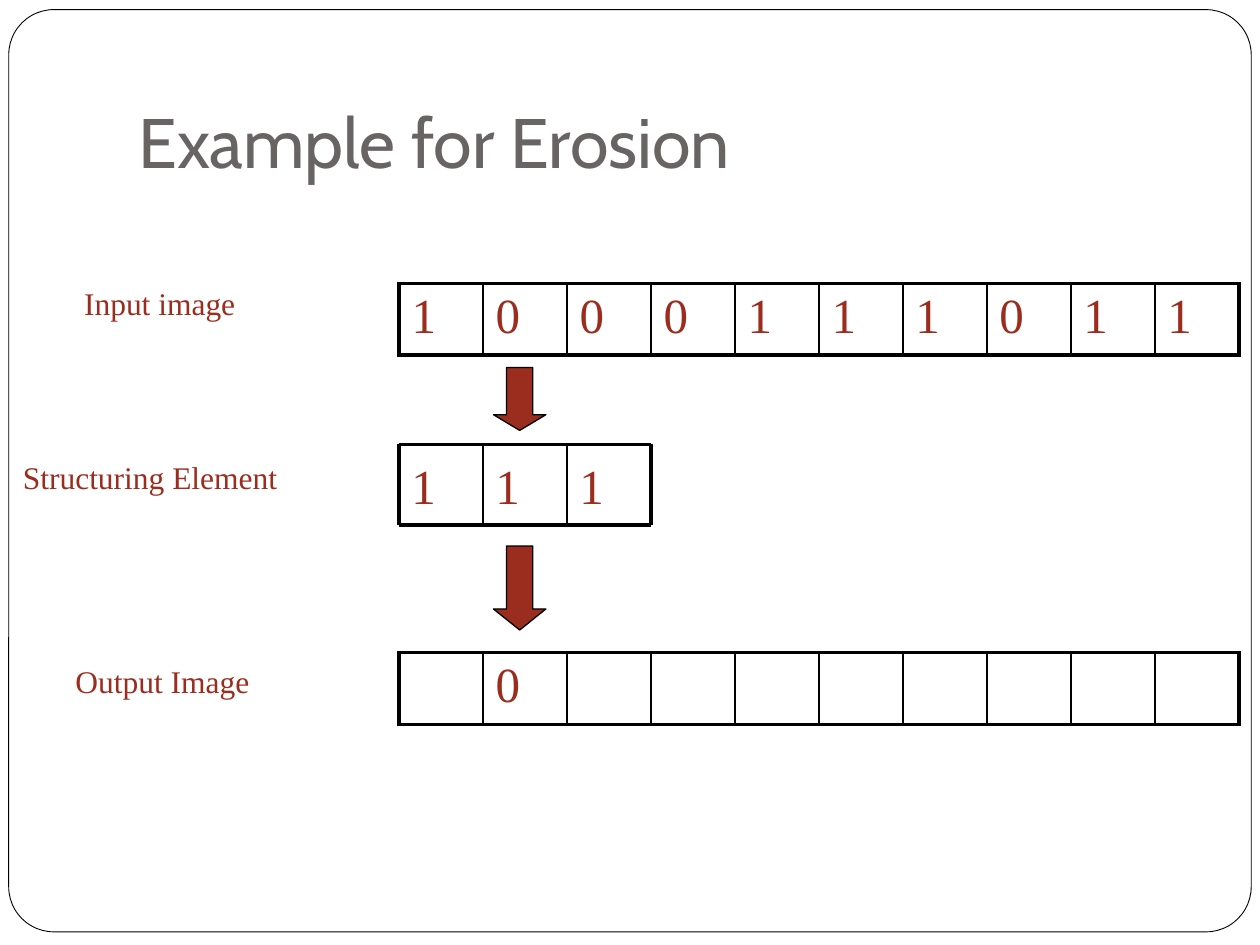
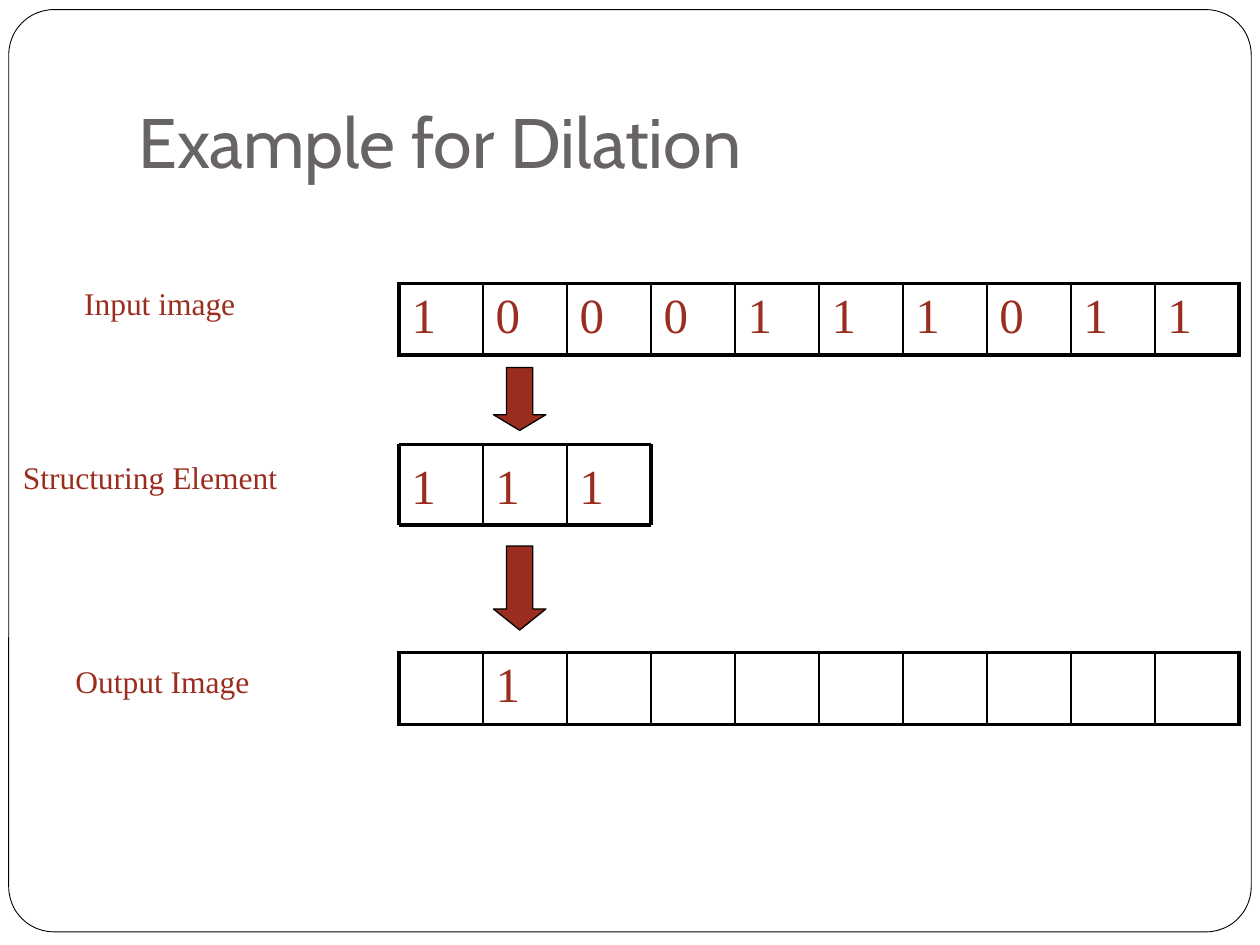
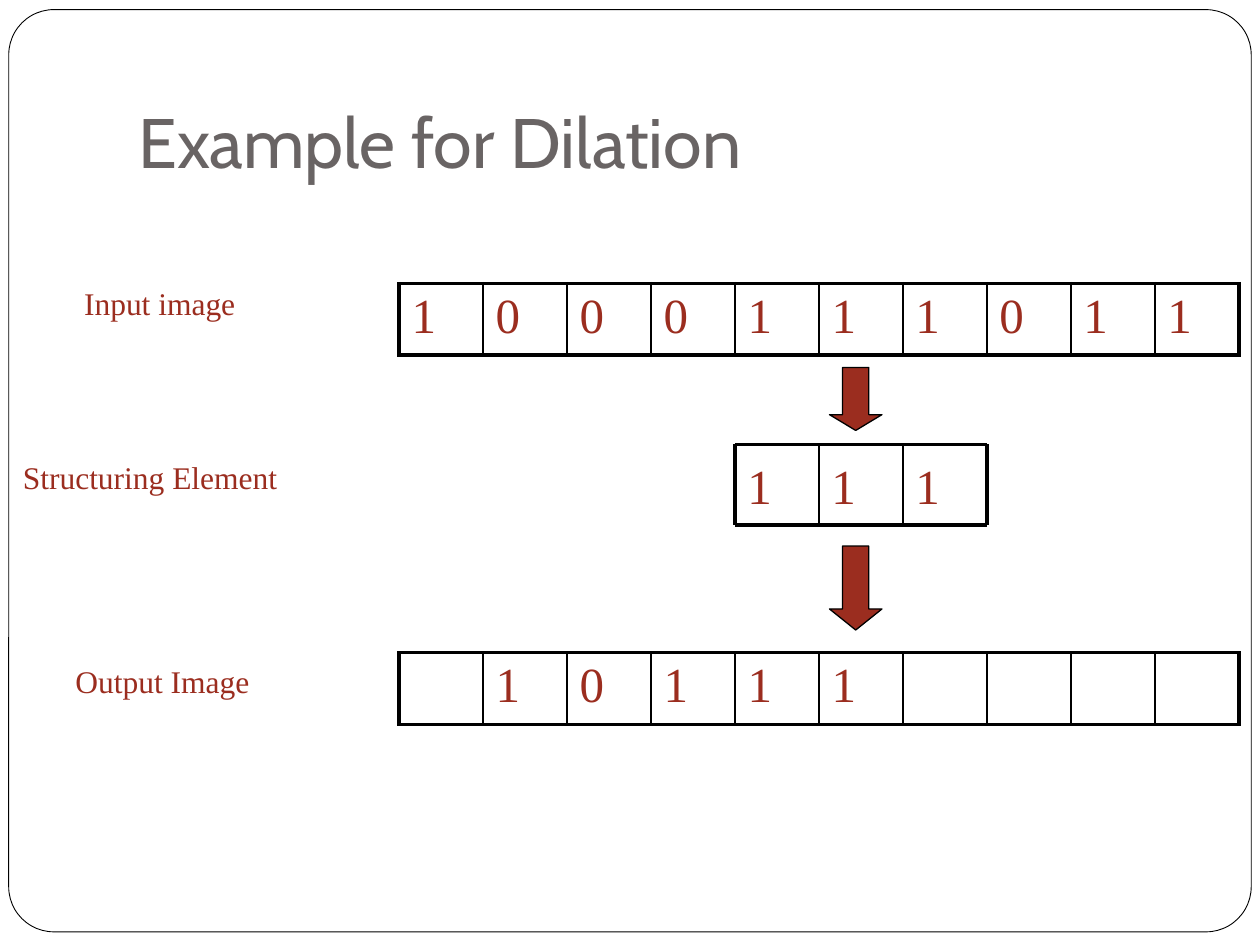
from dataclasses import dataclass

from lxml.etree import SubElement
from pptx import Presentation
from pptx.dml.color import RGBColor as RGB
from pptx.enum.shapes import MSO_CONNECTOR as Link, MSO_SHAPE as Form
from pptx.enum.text import MSO_ANCHOR as Anchor, MSO_AUTO_SIZE as Fit
from pptx.oxml.ns import qn
from pptx.util import Pt


@dataclass(frozen=True)
class Theme:
    red: RGB = RGB(0x9B, 0x2D, 0x1F)
    gray: RGB = RGB(0x69, 0x64, 0x64)
    black: RGB = RGB(0, 0, 0)
    white: RGB = RGB(255, 255, 255)
    head: str = "Cabin"
    body: str = "Times New Roman"
    title: int = 40
    label: int = 18
    digit: int = 28
    thick: float = 2.25
    thin: float = 1


LEFT, CELL, COUNT = 228, 48, 10
ROW = 40.5
INPUT_TOP, KERNEL_TOP, OUTPUT_TOP = 162, 254, 373
KERNEL_TALL = 46
INPUT, KERNEL = "1000111011", "111"
LABELS = (
    ("Input image", 41, 159, 130),
    ("Structuring Element", 6, 258, 208),
    ("Output Image", 36, 375, 147),
)
ARROWS = ((312, 48, 0.4), (210, 36, 0.3))
SLIDES = (
    ("Example for Erosion", 0, " 0"),
    ("Example for Dilation", 0, " 1"),
    ("Example for Dilation", 4, " 10111"),
)


def assign(item, values):
    for name, value in values.items():
        setattr(item, name, value)


class Deck:
    """Draws styled elements on the current slide."""

    def __init__(self, theme):
        self.theme = theme
        self.show = Presentation()
        assign(self.show, {"slide_width": Pt(720), "slide_height": Pt(540)})

    def page(self):
        self.slide = self.show.slides.add_slide(self.show.slide_layouts[6])
        self.shape(Form.ROUNDED_RECTANGLE, (5, 5.5, 710, 527), (0.049,), self.theme.white, 0.5)

    def shape(self, form, box, tweaks, fill, width):
        item = self.slide.shapes.add_shape(form, *map(Pt, box))
        item.shadow.inherit = False
        for spot, tweak in enumerate(tweaks):
            item.adjustments[spot] = tweak
        item.fill.solid()
        item.fill.fore_color.rgb = fill
        item.line.color.rgb = self.theme.black
        item.line.width = Pt(width)

    def letter(self, frame, text, size, color=None, face=None):
        run = frame.paragraphs[0].add_run()
        run.text = text
        assign(run.font, {"size": Pt(size), "name": face or self.theme.body})
        run.font.color.rgb = color or self.theme.red

    def text(self, words, box, size, frame=None, **style):
        item = self.slide.shapes.add_textbox(*map(Pt, box)).text_frame
        assign(item, {"word_wrap": True, **(frame or {})})
        self.letter(item, words, size, **style)

    def title(self, words):
        theme = self.theme
        form = {"vertical_anchor": Anchor.BOTTOM, "margin_bottom": Pt(7.2)}
        self.text(words, (72, 21.6, 612, 90), theme.title, form,
                  color=theme.gray, face=theme.head)

    def label(self, words, left, top, width):
        form = {"word_wrap": False, "auto_size": Fit.SHAPE_TO_FIT_TEXT}
        self.text(words, (left, top, width, 36), self.theme.label, form)

    def line(self, start, end, width):
        item = self.slide.shapes.add_connector(Link.STRAIGHT, *map(Pt, start + end))
        item.line.color.rgb = self.theme.black
        item.line.width = Pt(width)
        SubElement(item._element.spPr, qn("a:effectLst"))

    def border(self, cell, widths):
        props = cell._tc.get_or_add_tcPr()
        for side, width in widths.items():
            edge = SubElement(props, qn(f"a:ln{side}"), w=str(Pt(width)))
            fill = SubElement(edge, qn("a:solidFill"))
            SubElement(fill, qn("a:srgbClr"), val=str(self.theme.black))

    def strip(self, digits, top):
        theme = self.theme
        box = LEFT, top, CELL * COUNT, ROW
        table = self.slide.shapes.add_table(1, COUNT, *map(Pt, box)).table
        assign(table, {"first_row": False, "horz_banding": False})
        for spot, digit in enumerate(digits.ljust(COUNT)):
            cell = table.cell(0, spot)
            self.border(cell, {
                "L": theme.thin if spot else theme.thick,
                "R": theme.thin if spot < COUNT - 1 else theme.thick,
                "T": theme.thick,
                "B": theme.thick,
            })
            cell.fill.background()
            if digit != " ":
                self.letter(cell.text_frame, digit, theme.digit)

    def kernel(self, left):
        theme = self.theme
        size = len(KERNEL)
        right, base = left + CELL * size, KERNEL_TOP + KERNEL_TALL
        for spot, digit in enumerate(KERNEL):
            box = left + CELL * spot, KERNEL_TOP, CELL, KERNEL_TALL
            self.text(digit, box, theme.digit, {"vertical_anchor": Anchor.MIDDLE})
        for y in (KERNEL_TOP, base):
            self.line((left, y), (right, y), theme.thick)
        for spot in range(size + 1):
            x = left + CELL * spot
            width = theme.thick if spot in (0, size) else theme.thin
            self.line((x, KERNEL_TOP), (x, base), width)

    def arrow(self, left, top, tall, tip):
        self.shape(Form.DOWN_ARROW, (left, top, 30, tall), (0.5, tip), self.theme.red, 0.75)


def main():
    deck = Deck(Theme())
    for title, shift, output in SLIDES:
        deck.page()
        deck.title(title)
        deck.strip(INPUT, INPUT_TOP)
        deck.strip(output, OUTPUT_TOP)
        for label in LABELS:
            deck.label(*label)
        left = LEFT + CELL * shift
        deck.kernel(left)
        for arrow in ARROWS:
            deck.arrow(left + 54, *arrow)
    deck.show.save("out.pptx")


if __name__ == "__main__":
    main()
